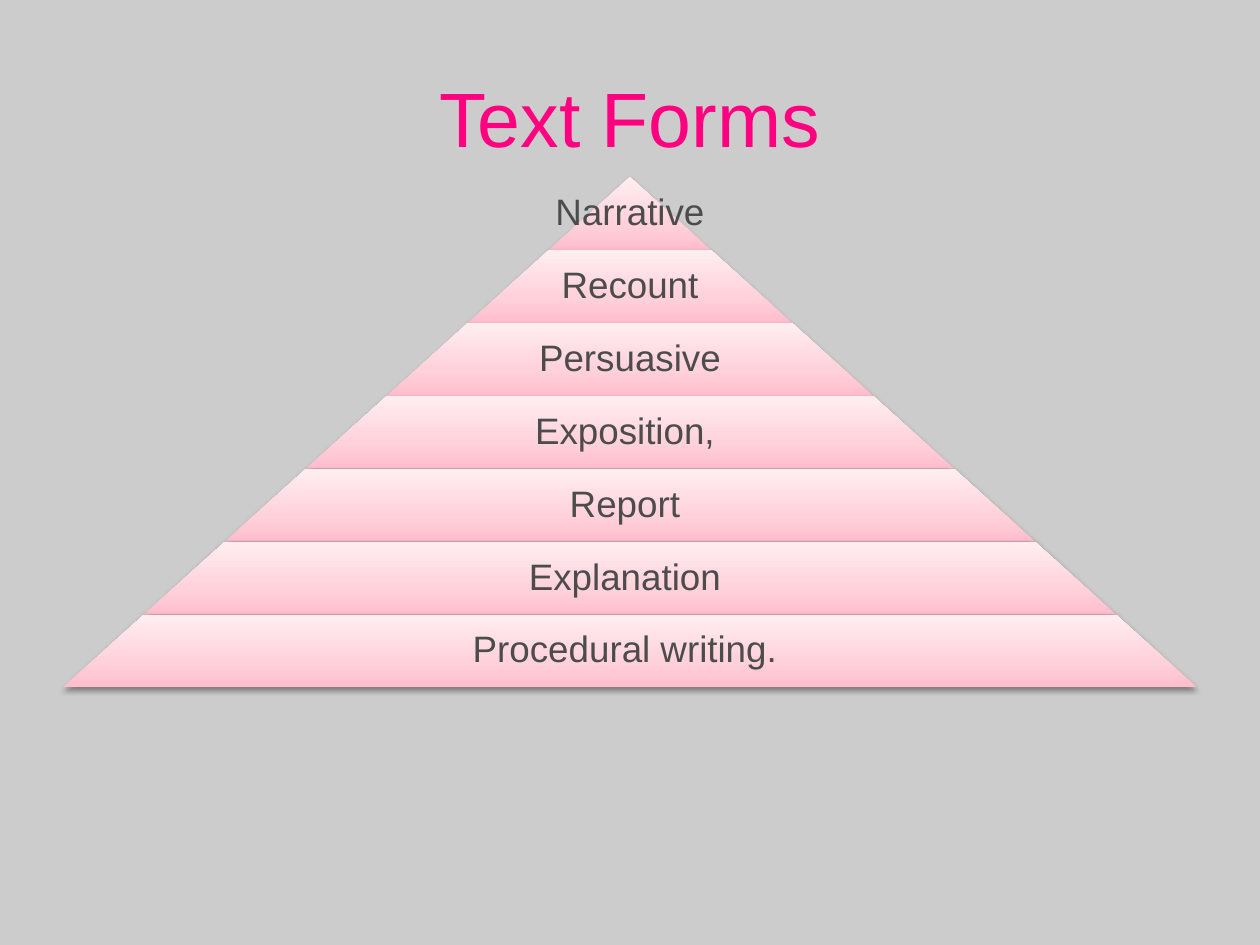
from copy import deepcopy
from dataclasses import dataclass

from lxml import etree
from pptx import Presentation
from pptx.dml.color import RGBColor
from pptx.enum.shapes import MSO_SHAPE
from pptx.enum.text import MSO_ANCHOR, PP_ALIGN
from pptx.oxml.ns import qn
from pptx.util import Cm, Pt

TRAPEZOID = MSO_SHAPE.TRAPEZOID
MIDDLE = MSO_ANCHOR.MIDDLE
CENTER = PP_ALIGN.CENTER

TITLE_ONLY = 5
SLIDE_WIDTH, SLIDE_HEIGHT = 25.4, 19.05
PYRAMID_TOP, PYRAMID_WIDTH, BAND_HEIGHT = 3.57, 22.86, 1.47
LABEL_SHARE = 0.65
TEXT_FORMS = [
    "Narrative",
    "Recount",
    "Persuasive",
    "Exposition, ",
    "Report ",
    "Explanation ",
    "Procedural writing. ",
]


@dataclass(frozen=True)
class Theme:
    """Colours, font and type sizes of the deck."""

    font: str = "Arial"
    title_size: int = 44
    label_size: int = 21
    background: str = "CCCCCC"
    title: str = "FF0080"
    label: str = "4C4C4C"
    shadow: str = "000000"
    band: tuple = ((0, "FFBDCD"), (0.35, "FFD1DB"), (1, "FFEEF1"))


class SlideBuilder:
    """Draws styled elements on the current slide."""

    def __init__(self, deck, theme):
        self.theme = theme
        self.slide = deck.slides.add_slide(deck.slide_layouts[TITLE_ONLY])
        fill = self.slide.background.fill
        fill.solid()
        fill.fore_color.rgb = RGBColor.from_string(theme.background)

    def set_text(self, frame, text, size, color):
        frame.text = text
        frame.word_wrap = True
        frame.vertical_anchor = MIDDLE
        para = frame.paragraphs[0]
        para.alignment = CENTER
        for span in para.runs:
            span.font.name = self.theme.font
            span.font.size = Pt(size)
            span.font.color.rgb = RGBColor.from_string(color)
        return para

    def title(self, text, left, top, width, height):
        box = self.slide.shapes.title
        box.left, box.top = Cm(left), Cm(top)
        box.width, box.height = Cm(width), Cm(height)
        self.set_text(box.text_frame, text, self.theme.title_size, self.theme.title)

    def soft_shadow(self, shape):
        shape.shadow.inherit = False
        effects = shape._element.spPr.find(qn("a:effectLst"))
        shadow = etree.SubElement(
            effects, qn("a:outerShdw"), blurRad=str(Pt(3.1)), dist=str(Pt(1.6)),
            dir="5400000", rotWithShape="0",
        )
        color = etree.SubElement(shadow, qn("a:srgbClr"), val=self.theme.shadow)
        etree.SubElement(color, qn("a:alpha"), val="38000")

    def band(self, group, left, top, width, height, slant):
        shape = group.shapes.add_shape(
            TRAPEZOID, Cm(left), Cm(top), Cm(width), Cm(height)
        )
        shape.adjustments[0] = slant
        shape.line.fill.background()
        shape.fill.gradient()
        shape.fill.gradient_angle = 90
        stop_list = shape._element.spPr.find(".//" + qn("a:gsLst"))
        stop_list.append(deepcopy(stop_list[-1]))
        for stop, (position, color) in zip(shape.fill.gradient_stops, self.theme.band):
            stop.position = position
            stop.color.rgb = RGBColor.from_string(color)
        self.soft_shadow(shape)

    def label(self, group, text, left, top, width, height):
        box = group.shapes.add_textbox(Cm(left), Cm(top), Cm(width), Cm(height))
        frame = box.text_frame
        frame.margin_left = frame.margin_right = Cm(0.07)
        frame.margin_top = frame.margin_bottom = Cm(0.07)
        para = self.set_text(frame, text, self.theme.label_size, self.theme.label)
        para.line_spacing = 0.9

    def pyramid(self, texts, top, base_width, band_height):
        group = self.slide.shapes.add_group_shape()
        step = base_width / len(texts)
        slant = step / 2 / band_height
        for level, text in enumerate(texts):
            width = step * (level + 1)
            label_width = max(step, width * LABEL_SHARE)
            band_top = top + level * band_height
            self.band(group, (SLIDE_WIDTH - width) / 2, band_top, width,
                      band_height, slant)
            self.label(group, text, (SLIDE_WIDTH - label_width) / 2, band_top,
                       label_width, band_height)


def main():
    deck = Presentation()
    deck.slide_width, deck.slide_height = Cm(SLIDE_WIDTH), Cm(SLIDE_HEIGHT)
    page = SlideBuilder(deck, Theme())
    page.title("Text Forms", 1.27, 0.76, 22.86, 3.18)
    page.pyramid(TEXT_FORMS, PYRAMID_TOP, PYRAMID_WIDTH, BAND_HEIGHT)
    deck.save("out.pptx")


if __name__ == "__main__":
    main()
